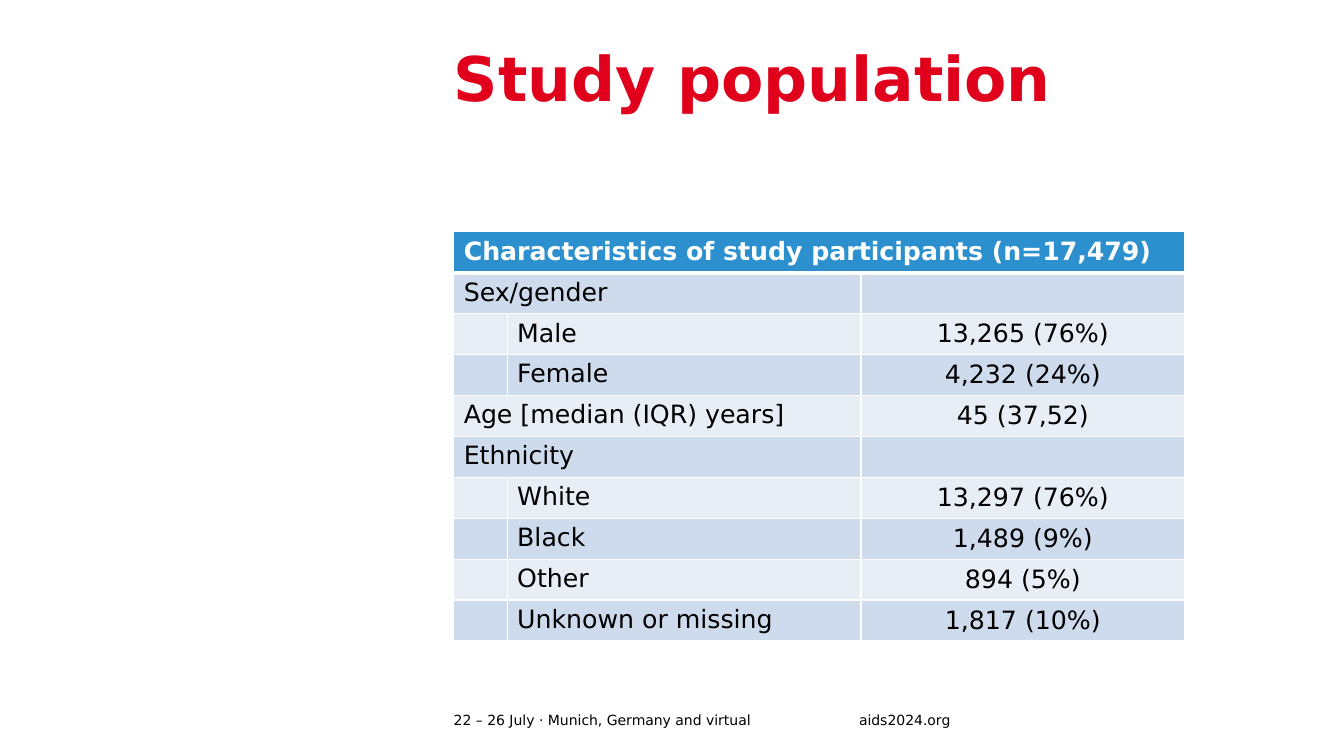
from lxml.etree import SubElement
from pptx import Presentation
from pptx.dml.color import RGBColor
from pptx.enum.text import MSO_ANCHOR, PP_ALIGN
from pptx.oxml.ns import qn
from pptx.util import Inches, Pt

# Content
TITLE = "Study population"
FOOTER = [  # text, left, width
    ("22 – 26 July · Munich, Germany and virtual", 4.5, 4.02),
    ("aids2024.org", 8.52, 1.93),
]
HEAD = "Characteristics of study participants (n=17,479)"
ROWS = [  # group label, item label, value
    ("Sex/gender", "", ""),
    ("", "Male", "13,265 (76%)"),
    ("", "Female", "4,232 (24%)"),
    ("Age [median (IQR) years]", "", "45 (37,52)"),
    ("Ethnicity", "", ""),
    ("", "White", "13,297 (76%)"),
    ("", "Black", "1,489 (9%)"),
    ("", "Other", "894 (5%)"),
    ("", "Unknown or missing", "1,817 (10%)"),
]
WIDTHS = [0.53, 3.51, 3.21]
LEFT, TOP, HEIGHT = 4.5, 2.3, 4.06

# Style
FONT = "DejaVu Sans"
RED = RGBColor(0xE0, 0x00, 0x1B)
BLUE = RGBColor(0x2C, 0x90, 0xCF)
BANDS = [RGBColor(0xCD, 0xDB, 0xED), RGBColor(0xE8, 0xEE, 0xF6)]
WHITE = RGBColor(0xFF, 0xFF, 0xFF)
BLACK = RGBColor(0x00, 0x00, 0x00)


def write(frame, text, size=18, color=BLACK, bold=False, align=PP_ALIGN.LEFT, space=None):
    para = frame.paragraphs[0]
    para.alignment = align
    para.line_spacing = space
    run = para.add_run()
    run.text = text
    font = run.font
    font.name, font.size, font.bold = FONT, Pt(size), bold
    font.color.rgb = color


def add_text(slide, text, left, top, width, height, anchor, **style):
    box = slide.shapes.add_textbox(Inches(left), Inches(top), Inches(width), Inches(height))
    frame = box.text_frame
    frame.word_wrap = True
    frame.vertical_anchor = anchor
    frame.margin_left = frame.margin_right = frame.margin_top = frame.margin_bottom = 0
    write(frame, text, **style)


def paint(cell, color, top=1, bottom=1):
    """Set white borders, then the fill, in schema order."""
    props = cell._tc.get_or_add_tcPr()
    for side, points in (("L", 1), ("R", 1), ("T", top), ("B", bottom)):
        line = SubElement(props, qn("a:ln" + side), w=str(Pt(points)))
        fill = SubElement(line, qn("a:solidFill"))
        SubElement(fill, qn("a:srgbClr"), val=str(WHITE))
    cell.fill.solid()
    cell.fill.fore_color.rgb = color


def add_grid(slide):
    count = len(ROWS) + 1
    table = slide.shapes.add_table(
        count, len(WIDTHS), Inches(LEFT), Inches(TOP), Inches(sum(WIDTHS)), Inches(HEIGHT)
    ).table
    for col, width in zip(table.columns, WIDTHS):
        col.width = Inches(width)
    for row in table.rows:
        row.height = Inches(HEIGHT / count)

    # Header row
    for cell in table.rows[0].cells:
        paint(cell, BLUE, bottom=3)
    table.cell(0, 0).merge(table.cell(0, 2))
    write(table.cell(0, 0).text_frame, HEAD, color=WHITE, bold=True)

    # Body rows: a group label spans the first two columns
    for i, texts in enumerate(ROWS, 1):
        for j, text in enumerate(texts):
            cell = table.cell(i, j)
            paint(cell, BANDS[(i - 1) % 2], top=3 if i == 1 else 1)
            if text:
                write(cell.text_frame, text, align=PP_ALIGN.CENTER if j == 2 else PP_ALIGN.LEFT)
            if j == 2:
                cell.vertical_anchor = MSO_ANCHOR.MIDDLE
        if texts[0]:
            table.cell(i, 0).merge(table.cell(i, 1))


def main():
    deck = Presentation()
    deck.slide_width, deck.slide_height = Inches(13.33), Inches(7.5)
    slide = deck.slides.add_slide(deck.slide_layouts[6])
    for text, left, width in FOOTER:
        add_text(slide, text, left, 7.02, width, 0.24, MSO_ANCHOR.MIDDLE, size=10)
    add_grid(slide)
    add_text(slide, TITLE, LEFT, 0.48, 8.35, 1.34, MSO_ANCHOR.TOP,
             size=44, color=RED, bold=True, space=0.9)
    deck.save("out.pptx")


if __name__ == "__main__":
    main()
